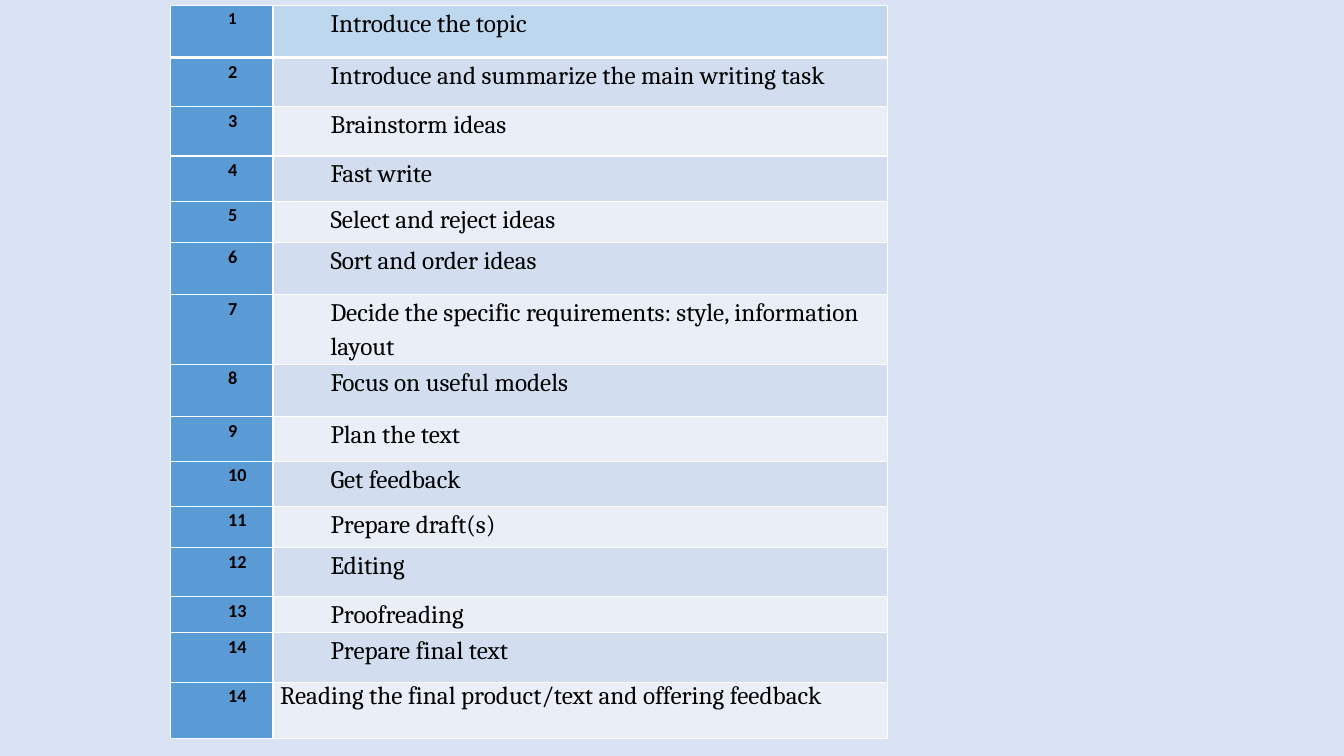
from lxml.etree import SubElement
from pptx import Presentation
from pptx.dml.color import RGBColor as Rgb
from pptx.oxml.ns import qn
from pptx.util import Cm, Pt

COLORS = {
    "background": "DAE3F3",
    "number": "5B9BD5",
    "first": "BDD7EE",
    "even": "D2DEEF",
    "odd": "EAEFF7",
    "border": "FFFFFF",
    "text": "000000",
}
STEPS = [
    ("1", "Introduce the topic", 1.32),
    ("2", "Introduce and summarize the main writing task", 1.24),
    ("3", "Brainstorm ideas", 1.24),
    ("4", "Fast write", 1.14),
    ("5", "Select and reject ideas", 1.04),
    ("6", "Sort and order ideas", 1.32),
    ("7", "Decide the specific requirements: style, information layout", 1.75),
    ("8", "Focus on useful models", 1.32),
    ("9", "Plan the text", 1.12),
    ("10", "Get feedback", 1.14),
    ("11", "Prepare draft(s)", 1.04),
    ("12", "Editing", 1.24),
    ("13", "Proofreading", 0.91),
    ("14", "Prepare final text", 1.24),
    ("14", "Reading the final product/text and offering feedback", 1.42),
]
NUMBER_SHARE = 1 / 7


def draw_borders(cell, top, bottom):
    """Draw the four borders of a cell, with widths in points."""
    properties = cell._tc.get_or_add_tcPr()
    for side, width in (("L", 1), ("R", 1), ("T", top), ("B", bottom)):
        line = SubElement(properties, qn(f"a:ln{side}"), w=str(Pt(width)))
        fill = SubElement(line, qn("a:solidFill"))
        SubElement(fill, qn("a:srgbClr"), val=COLORS["border"])


def fill_cell(cell, words, color, font, size, bold, indented):
    """Colour a cell and write its words."""
    cell.fill.solid()
    cell.fill.fore_color.rgb = Rgb.from_string(COLORS[color])
    cell.margin_left = cell.margin_right = Cm(0.18)
    cell.margin_top = cell.margin_bottom = Cm(0)
    paragraph = cell.text_frame.paragraphs[0]
    if indented:
        paragraph.line_spacing = 1.15
        paragraph._p.get_or_add_pPr().set("marL", str(Cm(1.27)))
    run = paragraph.add_run()
    run.text = words
    run.font.name = font
    run.font.size = Pt(size)
    run.font.bold = bold
    run.font.color.rgb = Rgb.from_string(COLORS["text"])


def add_steps(slide, left, top, width):
    """Place the numbered writing steps as a table of the given width."""
    total = sum(height for _, _, height in STEPS)
    steps = slide.shapes.add_table(
        len(STEPS), 2, Cm(left), Cm(top), Cm(width), Cm(total)
    ).table
    steps.columns[0].width = Cm(width * NUMBER_SHARE)
    steps.columns[1].width = Cm(width * (1 - NUMBER_SHARE))
    last = len(STEPS) - 1
    for index, (number, step, height) in enumerate(STEPS):
        steps.rows[index].height = Cm(height)
        number_cell, step_cell = steps.cell(index, 0), steps.cell(index, 1)
        for cell in (number_cell, step_cell):
            draw_borders(cell, 3 if index == 1 else 1, 3 if index == 0 else 1)
        band = "first" if index == 0 else "even" if index % 2 else "odd"
        number_size = 12 if index == 0 else 13
        fill_cell(number_cell, number, "number", "Calibri", number_size, True, True)
        fill_cell(step_cell, step, band, "Cambria", 18, False, index < last)


def main():
    """Build the slide and save it."""
    deck = Presentation()
    deck.slide_width, deck.slide_height = Cm(33.87), Cm(19.05)
    slide = deck.slides.add_slide(deck.slide_layouts[6])
    slide.background.fill.solid()
    slide.background.fill.fore_color.rgb = Rgb.from_string(COLORS["background"])
    add_steps(slide, 4.3, 0.13, 18.06)
    deck.save("out.pptx")


if __name__ == "__main__":
    main()
